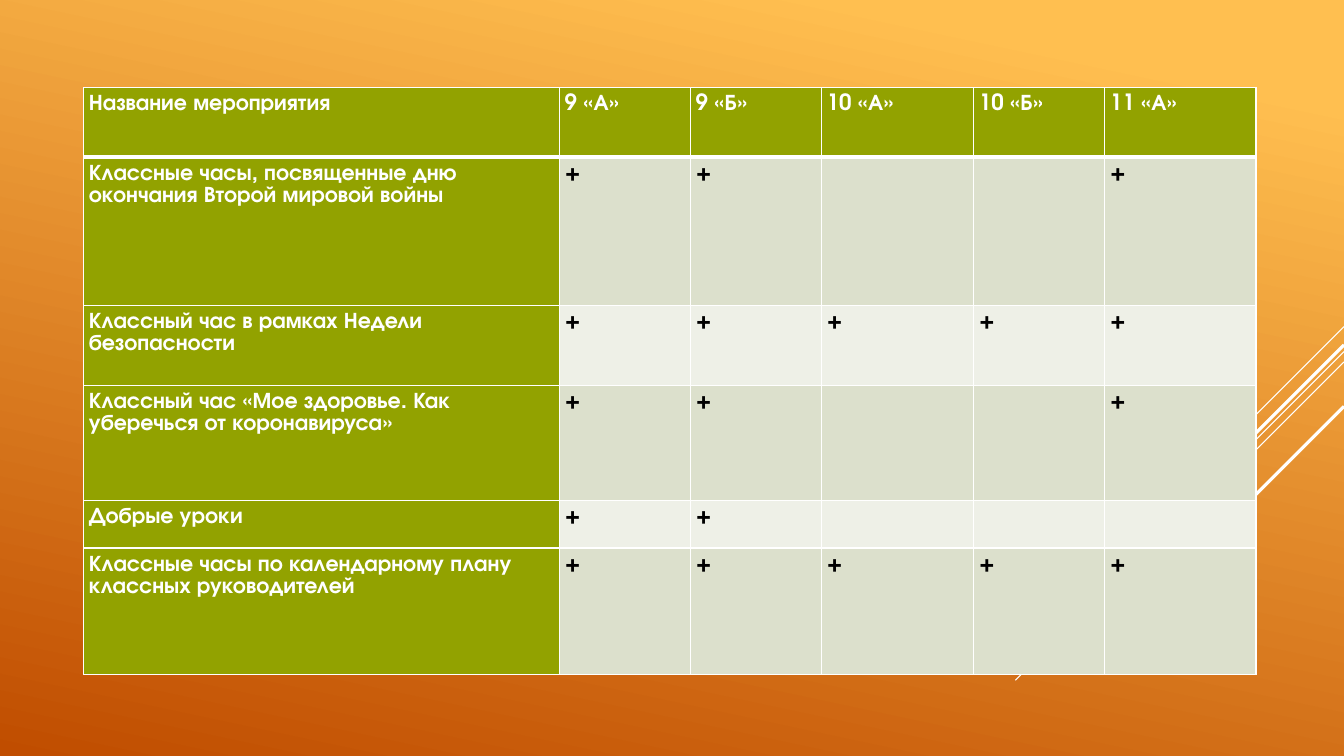
import dataclasses

import lxml.etree
import pptx
import pptx.dml.color
import pptx.enum.shapes
import pptx.oxml.ns
import pptx.presentation
import pptx.slide
import pptx.table
import pptx.util

Cm = pptx.util.Cm
Pt = pptx.util.Pt
FONT = "TeX Gyre Adventor"
HEX = {
    "white": "FFFFFF", "black": "000000", "green": "92A200",
    "dark": "DCE0CC", "pale": "EEF0E7", "sun": "FFBF50", "rust": "C04D00",
}
WIDE, HIGH = 33.87, 19.05


@dataclasses.dataclass
class Ray:
    top: float
    span: float
    size: float


@dataclasses.dataclass
class Event:
    name: str
    marks: str  # one sign per class, "-" for none
    high: float
    after: float = 0


RAYS = [
    Ray(8.23, 2.54, 0.75), Ray(8.86, 8.28, 0.75), Ray(9.12, 5.26, 0.75),
    Ray(8.69, 4.85, 2.25), Ray(10.24, 3.53, 2.25),
]
HEADS = ["Название мероприятия", "9 «А»", "9 «Б»", "10 «А»", "10 «Б»", "11 «А»"]
COLS = [11.99, 3.3, 3.3, 3.84, 3.3, 3.81]
HEAD_HIGH = 1.75
EVENTS = [
    Event("Классные часы, посвященные дню окончания Второй мировой войны",
          "++--+", 3.73, 7.5),
    Event("Классный час в рамках Недели безопасности", "+++++", 2.03, 7.5),
    Event("Классный час «Мое здоровье. Как уберечься от коронавируса»",
          "++--+", 2.9),
    Event("Добрые уроки", "++---", 1.19),
    Event("Классные часы по календарному плану классных руководителей",
          "+++++", 3.18),
]


def color(name: str) -> pptx.dml.color.RGBColor:
    return pptx.dml.color.RGBColor.from_string(HEX[name])


def add_node(base: lxml.etree._Element, tag: str, **attrs: str) -> lxml.etree._Element:
    return lxml.etree.SubElement(base, pptx.oxml.ns.qn(tag), **attrs)


def paint_back(slide: pptx.slide.Slide) -> None:
    fill = slide.background.fill
    fill.gradient()
    fill.gradient_angle = 258
    for stop, name, place in zip(fill.gradient_stops, ("sun", "rust"), (0.1, 1)):
        stop.color.rgb = color(name)
        stop.position = place


def draw_ray(slide: pptx.slide.Slide, ray: Ray) -> None:
    line = slide.shapes.add_connector(
        pptx.enum.shapes.MSO_CONNECTOR.STRAIGHT,
        Cm(WIDE), Cm(ray.top), Cm(WIDE - ray.span), Cm(ray.top + ray.span))
    line.line.color.rgb = color("white")
    line.line.width = Pt(ray.size)
    add_node(line._element.spPr, "a:effectLst")


def fill_cell(cell: pptx.table._Cell, text: str, back: str, ink: str,
              top: float = 1, base: float = 1, after: float = 0) -> None:
    # Borders come before the fill in the cell properties
    props = cell._tc.get_or_add_tcPr()
    for side, size in zip("LRTB", (1, 1, top, base)):
        edge = add_node(props, f"a:ln{side}", w=str(Pt(size)))
        add_node(add_node(edge, "a:solidFill"), "a:srgbClr", val=HEX["white"])
    cell.fill.solid()
    cell.fill.fore_color.rgb = color(back)
    cell.margin_left = cell.margin_right = Cm(0.13)
    cell.margin_top = cell.margin_bottom = Cm(0.13)
    if not text:
        return
    para = cell.text_frame.paragraphs[0]
    para.line_spacing = 1.07
    para.space_after = Pt(after)
    run = para.add_run()
    run.text = text
    run.font.name = FONT
    run.font.size = Pt(16)
    run.font.bold = True
    run.font.color.rgb = color(ink)


def draw_table(slide: pptx.slide.Slide) -> None:
    highs = [HEAD_HIGH] + [event.high for event in EVENTS]
    table = slide.shapes.add_table(
        len(highs), len(COLS), Cm(2.11), Cm(2.21), Cm(sum(COLS)), Cm(sum(highs))).table
    for col, wide in zip(table.columns, COLS):
        col.width = Cm(wide)
    for row, high in zip(table.rows, highs):
        row.height = Cm(high)
    # Header row
    for col, head in enumerate(HEADS):
        fill_cell(table.cell(0, col), head, "green", "white", base=3)
    # Event rows, with bands in turn
    for row, event in enumerate(EVENTS, 1):
        top = 3 if row == 1 else 1
        band = "dark" if row % 2 else "pale"
        fill_cell(table.cell(row, 0), event.name, "green", "white", top,
                  after=event.after)
        for col, mark in enumerate(event.marks, 1):
            fill_cell(table.cell(row, col), mark.strip("-"), band, "black", top)


def main() -> None:
    deck = pptx.Presentation()
    deck.slide_width, deck.slide_height = Cm(WIDE), Cm(HIGH)
    slide = deck.slides.add_slide(deck.slide_layouts[6])
    paint_back(slide)
    for ray in RAYS:
        draw_ray(slide, ray)
    draw_table(slide)
    deck.save("out.pptx")


if __name__ == "__main__":
    main()
